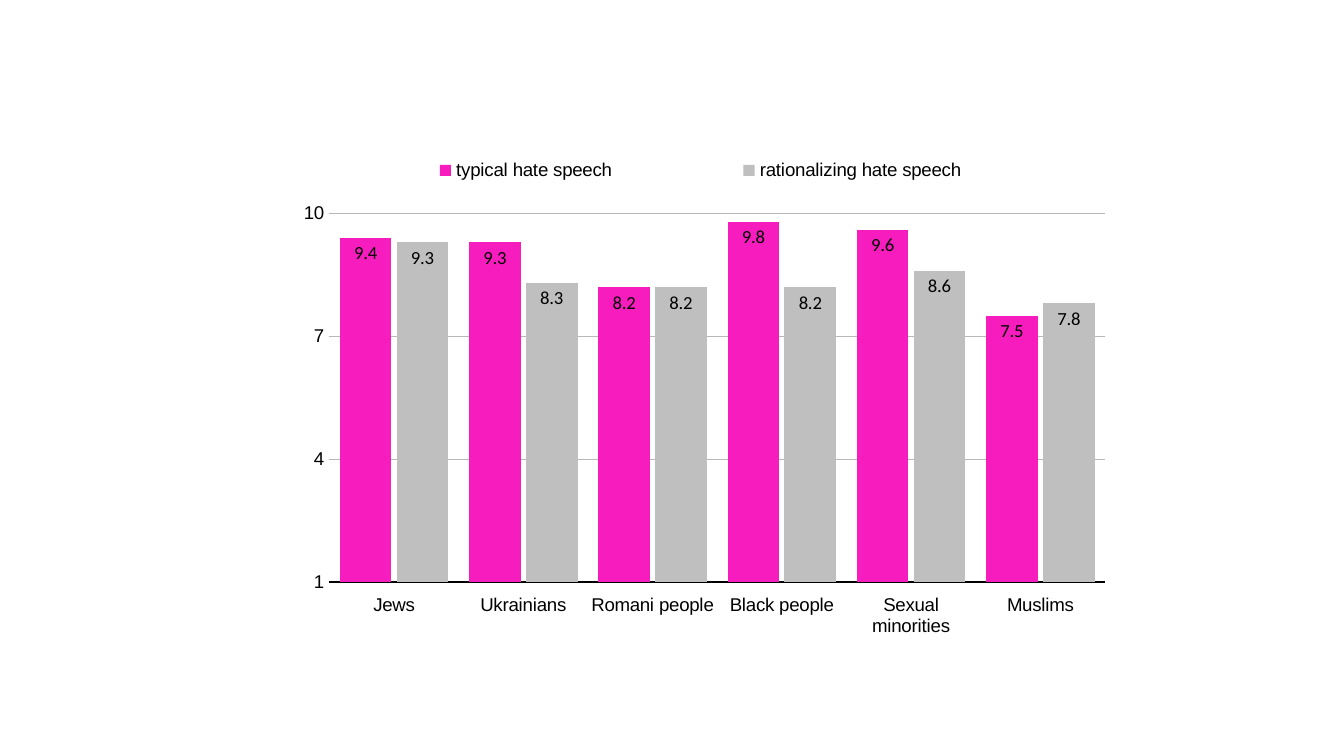
from dataclasses import dataclass

from pptx import Presentation
from pptx.chart.data import CategoryChartData
from pptx.dml.color import RGBColor
from pptx.enum.chart import (XL_CHART_TYPE, XL_LABEL_POSITION, XL_LEGEND_POSITION,
                             XL_TICK_LABEL_POSITION, XL_TICK_MARK)
from pptx.oxml import parse_xml
from pptx.oxml.ns import nsdecls, qn
from pptx.util import Emu, Pt

EMU_PER_PX = 914400 / 134.4

GROUPS = ["Jews", "Ukrainians", "Romani people", "Black people",
          "Sexual minorities", "Muslims"]
RATINGS = {
    "typical hate speech": [9.4, 9.3, 8.2, 9.8, 9.6, 7.5],
    "rationalizing hate speech": [9.3, 8.3, 8.2, 8.2, 8.6, 7.8],
}


@dataclass(frozen=True)
class Theme:
    text: str = "000000"
    grid: str = "B8B8B8"
    series: tuple = ("F61CBD", "BFBFBF")
    axis_font: str = "Arial"
    label_font: str = "Calibri"
    size: int = 10


def px(length):
    return Emu(round(length * EMU_PER_PX))


def set_values(target, values):
    for name, value in values.items():
        setattr(target, name, value)


def set_layout(element, index, inner=False, **fractions):
    """Place a chart part by fractions of the chart's width and height."""
    for old in element.findall(qn("c:layout")):
        element.remove(old)
    target = '<c:layoutTarget val="inner"/>' if inner else ""
    modes = "".join(f'<c:{key}Mode val="edge"/>' for key in "xy")
    sizes = "".join(f'<c:{key} val="{value}"/>' for key, value in fractions.items())
    element.insert(index, parse_xml(
        f'<c:layout {nsdecls("c")}><c:manualLayout>{target}{modes}{sizes}'
        "</c:manualLayout></c:layout>"))


class SlideBuilder:
    def __init__(self, slide, theme):
        self.slide = slide
        self.theme = theme

    def style_font(self, font, name):
        set_values(font, {"name": name, "size": Pt(self.theme.size), "bold": False})
        font.color.rgb = RGBColor.from_string(self.theme.text)

    def style_line(self, line, color, width):
        line.color.rgb = RGBColor.from_string(color)
        line.width = Pt(width)

    def style_axes(self, chart):
        category, value = chart.category_axis, chart.value_axis
        for axis in (category, value):
            set_values(axis, {"major_tick_mark": XL_TICK_MARK.NONE,
                              "minor_tick_mark": XL_TICK_MARK.NONE})
            self.style_font(axis.tick_labels.font, self.theme.axis_font)
        category.tick_label_position = XL_TICK_LABEL_POSITION.LOW
        self.style_line(category.format.line, self.theme.text, 1)
        set_values(value, {"minimum_scale": 1, "maximum_scale": 10, "major_unit": 3,
                           "has_major_gridlines": True})
        set_values(value.tick_labels, {"number_format": "0",
                                       "number_format_is_linked": False})
        value.format.line.fill.background()
        self.style_line(value.major_gridlines.format.line, self.theme.grid, 0.25)

    def style_series(self, series, color):
        series.format.fill.solid()
        series.format.fill.fore_color.rgb = RGBColor.from_string(color)
        labels = series.data_labels
        set_values(labels, {"show_value": True, "position": XL_LABEL_POSITION.INSIDE_END,
                            "number_format": "#,##0.0", "number_format_is_linked": False})
        self.style_font(labels.font, self.theme.label_font)

    def add_legend(self, chart):
        chart.has_legend = True
        legend = chart.legend
        set_values(legend, {"position": XL_LEGEND_POSITION.TOP, "include_in_layout": True})
        self.style_font(legend.font, self.theme.axis_font)
        set_layout(chart._chartSpace.find(".//" + qn("c:legend")), 1,
                   x=0.15, y=0, w=0.83, h=0.06)

    def add_column_chart(self, left, top, width, height, categories, ratings):
        data = CategoryChartData(number_format="0.0")
        data.categories = categories
        for name, values in ratings.items():
            data.add_series(name, values)
        chart = self.slide.shapes.add_chart(
            XL_CHART_TYPE.COLUMN_CLUSTERED, px(left), px(top), px(width), px(height),
            data).chart
        chart.has_title = False
        self.style_font(chart.font, self.theme.label_font)
        plot = chart.plots[0]
        set_values(plot, {"gap_width": 40, "overlap": -10, "vary_by_categories": False})
        for series, color in zip(plot.series, self.theme.series):
            self.style_series(series, color)
        self.style_axes(chart)
        self.add_legend(chart)
        set_layout(chart._chartSpace.find(".//" + qn("c:plotArea")), 0, inner=True,
                   x=0.166, y=0.12, w=0.834, h=0.77)
        return chart


def main():
    deck = Presentation()
    set_values(deck, {"slide_width": px(1344), "slide_height": px(756)})
    page = deck.slides.add_slide(deck.slide_layouts[6])
    builder = SlideBuilder(page, Theme())
    builder.add_column_chart(175, 156, 931, 481, GROUPS, RATINGS)
    deck.save("out.pptx")


if __name__ == "__main__":
    main()
